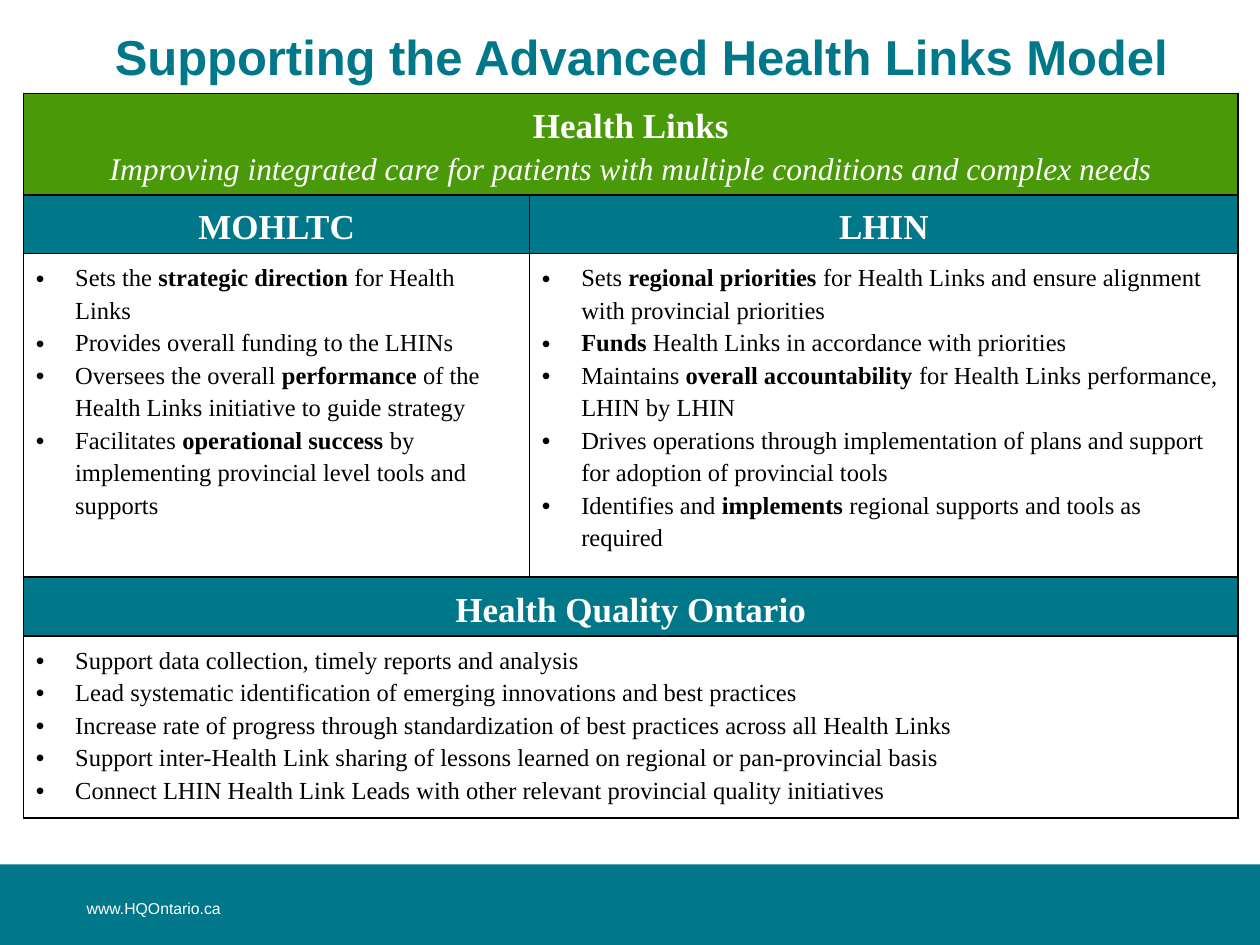
from lxml import etree
from pptx import Presentation
from pptx.dml.color import RGBColor
from pptx.enum.shapes import MSO_SHAPE
from pptx.enum.text import MSO_ANCHOR, PP_ALIGN
from pptx.oxml.ns import qn
from pptx.util import Pt

RECTANGLE = MSO_SHAPE.RECTANGLE
MIDDLE, TOP = MSO_ANCHOR.MIDDLE, MSO_ANCHOR.TOP
CENTER, LEFT = PP_ALIGN.CENTER, PP_ALIGN.LEFT

COLORS = {"teal": "00788A", "green": "499908", "white": "FFFFFF", "black": "000000"}
SANS, SERIF = "Arial", "Times New Roman"

TITLE_FONT = {"name": SANS, "size": Pt(28), "bold": True}
FOOTER_FONT = {"name": SANS, "size": Pt(9)}
HEADING_FONT = {"name": SERIF, "size": Pt(20), "bold": True}
TAGLINE_FONT = {"name": SERIF, "size": Pt(18), "italic": True}
BODY_FONT = {"name": SERIF, "size": Pt(14)}

CELL_MARGINS = {"margin_left": Pt(7), "margin_right": Pt(7),
                "margin_top": Pt(3.4), "margin_bottom": Pt(0)}
BODY_MARGINS = {"margin_right": Pt(9)}
COLUMN_WIDTHS = [289.2, 404.8]
ROW_HEIGHTS = [57.6, 33.6, 182.4, 33.6, 102.2]
LINE_SPACING = 1.2
BULLET_INDENT = Pt(22.5)

# Text between ** marks is bold.
MINISTRY_ROLES = [
    "Sets the **strategic direction **for Health Links",
    "Provides overall funding to the LHINs",
    "Oversees the overall **performance **of the Health Links initiative to guide strategy",
    "Facilitates **operational success **by implementing provincial level tools and supports",
]
LHIN_ROLES = [
    "Sets **regional priorities **for Health Links and ensure alignment with provincial priorities",
    "**Funds** Health Links in accordance with priorities",
    "Maintains **overall accountability **for Health Links performance, LHIN by LHIN",
    "Drives operations through implementation of plans and support for adoption of "
    "provincial tools",
    "Identifies and **implements** regional supports and tools as required",
]
QUALITY_ROLES = [
    "Support data collection, timely reports and analysis",
    "Lead systematic identification of emerging innovations and best practices",
    "Increase rate of progress through standardization of best practices across all Health Links",
    "Support inter-Health Link sharing of lessons learned on regional or pan-provincial basis",
    "Connect LHIN Health Link Leads with other relevant provincial quality initiatives",
]


def rgb(color):
    return RGBColor.from_string(COLORS[color])


def set_attributes(target, values):
    for attribute, value in values.items():
        setattr(target, attribute, value)


def set_fill(target, color):
    target.fill.solid()
    target.fill.fore_color.rgb = rgb(color)


def write_paragraph(paragraph, text, font, color, align=LEFT):
    paragraph.alignment = align
    for index, part in enumerate(text.split("**")):
        if part:
            run = paragraph.add_run()
            run.text = part
            set_attributes(run.font, font)
            run.font.color.rgb = rgb(color)
            if index % 2:
                run.font.bold = True


def add_bullet(paragraph):
    properties = paragraph._p.get_or_add_pPr()
    properties.set("marL", str(BULLET_INDENT))
    properties.set("indent", str(-BULLET_INDENT))
    etree.SubElement(properties, qn("a:buFont"), typeface=SANS)
    etree.SubElement(properties, qn("a:buChar"), char="•")


def add_borders(cell):
    properties = cell._tc.get_or_add_tcPr()
    for side in ("lnL", "lnR", "lnT", "lnB"):
        line = etree.SubElement(properties, qn(f"a:{side}"), w=str(Pt(1)))
        solid = etree.SubElement(line, qn("a:solidFill"))
        etree.SubElement(solid, qn("a:srgbClr"), val=COLORS["black"])


def fill_cell(cell, color, paragraphs, bulleted=False):
    """Write (text, font) pairs: bulleted in black, or centred in white."""
    set_fill(cell, color)
    if bulleted:
        set_attributes(cell, BODY_MARGINS)
    frame = cell.text_frame
    for index, (text, font) in enumerate(paragraphs):
        paragraph = frame.add_paragraph() if index else frame.paragraphs[0]
        paragraph.line_spacing = LINE_SPACING
        if bulleted:
            add_bullet(paragraph)
            write_paragraph(paragraph, text, font, "black")
        else:
            write_paragraph(paragraph, text, font, "white", CENTER)


def add_text(slide, box, text, font, color, align, anchor):
    frame = slide.shapes.add_textbox(*map(Pt, box)).text_frame
    set_attributes(frame, {"word_wrap": True, "vertical_anchor": anchor})
    write_paragraph(frame.paragraphs[0], text, font, color, align)


def add_title(slide, box):
    add_text(slide, box, "Supporting the Advanced Health Links Model",
             TITLE_FONT, "teal", CENTER, MIDDLE)


def add_footer(slide, left, top, width, height):
    band = slide.shapes.add_shape(RECTANGLE, Pt(left), Pt(top), Pt(width), Pt(height))
    band.shadow.inherit = False
    set_fill(band, "teal")
    band.line.fill.background()
    add_text(slide, (left + 42.5, top + 15.8, 222, 19.5), "www.HQOntario.ca",
             FOOTER_FONT, "white", LEFT, TOP)


def add_roles_table(slide, left, top):
    table = slide.shapes.add_table(
        len(ROW_HEIGHTS), len(COLUMN_WIDTHS), Pt(left), Pt(top),
        Pt(sum(COLUMN_WIDTHS)), Pt(sum(ROW_HEIGHTS))).table
    set_attributes(table, {"first_row": False, "horz_banding": False})
    for column, width in zip(table.columns, COLUMN_WIDTHS):
        column.width = Pt(width)
    for row, height in zip(table.rows, ROW_HEIGHTS):
        row.height = Pt(height)
    for cell in table.iter_cells():
        set_attributes(cell, CELL_MARGINS)
        add_borders(cell)
        set_fill(cell, "white")
    for row in (0, 3, 4):
        table.cell(row, 0).merge(table.cell(row, 1))

    fill_cell(table.cell(0, 0), "green", [
        ("Health Links", HEADING_FONT),
        ("Improving integrated care for patients with multiple conditions and complex needs",
         TAGLINE_FONT),
    ])
    headings = {(1, 0): "MOHLTC", (1, 1): "LHIN", (3, 0): "Health Quality Ontario"}
    for position, heading in headings.items():
        fill_cell(table.cell(*position), "teal", [(heading, HEADING_FONT)])
    roles = {(2, 0): MINISTRY_ROLES, (2, 1): LHIN_ROLES, (4, 0): QUALITY_ROLES}
    for position, items in roles.items():
        fill_cell(table.cell(*position), "white",
                  [(item, BODY_FONT) for item in items], bulleted=True)


def main():
    presentation = Presentation()
    set_attributes(presentation, {"slide_width": Pt(720), "slide_height": Pt(540)})
    slide = presentation.slides.add_slide(presentation.slide_layouts[6])
    add_footer(slide, 0, 494, 723, 48)
    add_title(slide, (42.5, 0, 648, 64))
    add_roles_table(slide, 13.5, 53.3)
    presentation.save("out.pptx")


if __name__ == "__main__":
    main()
